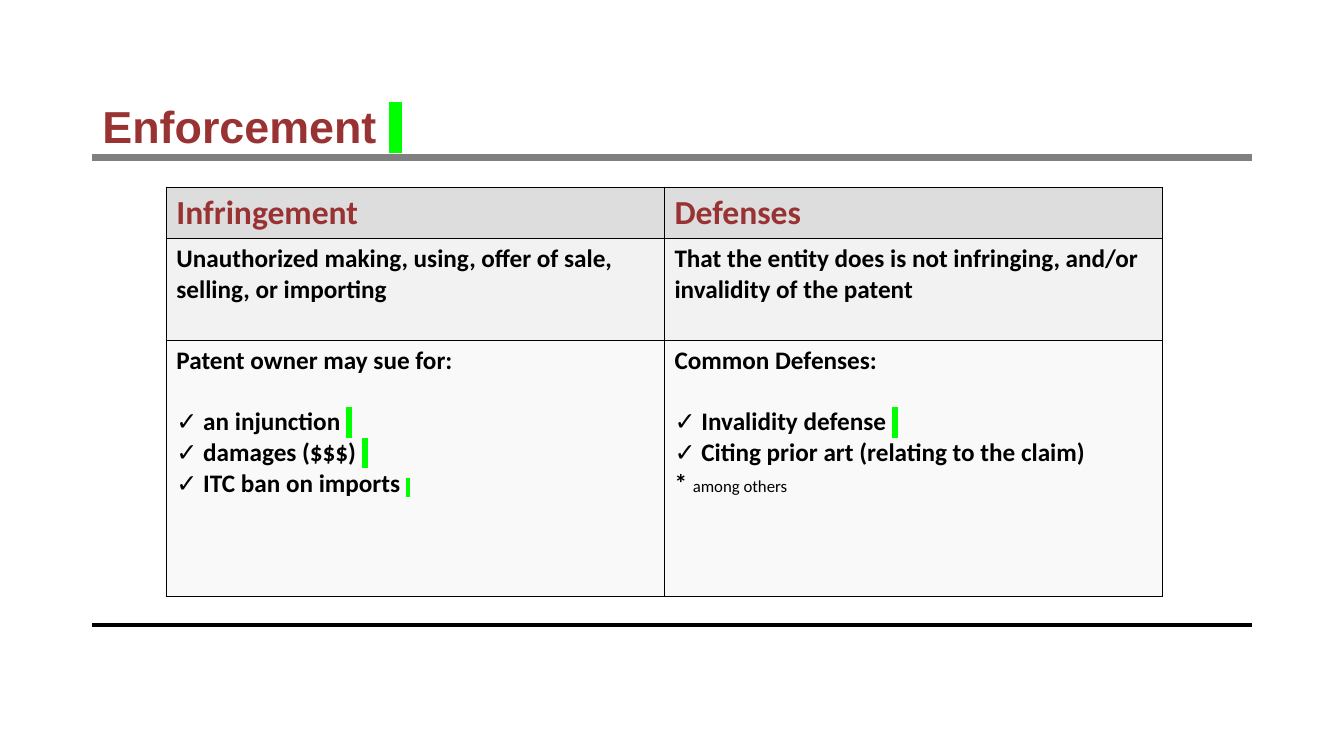
from pptx import Presentation
from pptx.dml.color import RGBColor
from pptx.enum.shapes import MSO_CONNECTOR as Connector
from pptx.enum.text import MSO_ANCHOR as Anchor, MSO_AUTO_SIZE as AutoSize, PP_ALIGN as Align
from pptx.oxml import parse_xml
from pptx.oxml.ns import nsdecls, qn
from pptx.util import Inches, Pt

BLACK = RGBColor(0, 0, 0)
GRAY = RGBColor(0x80, 0x80, 0x80)
MAROON = RGBColor(0x99, 0x33, 0x33)
GREEN = RGBColor(0, 0xFF, 0)
ROW_FILLS = [
    RGBColor(0xDD, 0xDD, 0xDD),
    RGBColor(0xF2, 0xF2, 0xF2),
    RGBColor(0xF9, 0xF9, 0xF9),
]

MARK = (" ", {"highlight": GREEN})
SMALL_MARK = (" ", {"highlight": GREEN, "size": 11})

TABLE_ROWS = [
    [[["Infringement"]], [["Defenses"]]],
    [
        [["Unauthorized making, using, offer of sale, selling, or importing"]],
        [["That the entity does is not infringing, and/or"], ["invalidity of the patent"]],
    ],
    [
        [
            ["Patent owner may sue for:"],
            ["✓ an injunction ", MARK],
            ["✓ damages ($$$) ", MARK],
            ["✓ ITC ban on imports ", SMALL_MARK],
        ],
        [
            ["Common Defenses:"],
            ["✓ Invalidity defense ", MARK],
            ["✓ Citing prior art (relating to the claim)"],
            ["* ", ("among others", {"size": 12, "bold": False})],
        ],
    ],
]


class SlideBuilder:
    columns, rows = 160, 90
    title_font, body_font = "Arial", "Calibri"
    lead_gap = Pt(22)

    def __init__(self, presentation):
        self.width = presentation.slide_width
        self.height = presentation.slide_height
        self.slide = presentation.slides.add_slide(presentation.slide_layouts[5])

    def x(self, column):
        return round(self.width * column / self.columns)

    def y(self, row):
        return round(self.height * row / self.rows)

    def add_run(self, paragraph, text, font, size, color, bold=True, highlight=None):
        run = paragraph.add_run()
        run.text = text
        run.font.name = font
        run.font.size = Pt(size)
        run.font.bold = bold
        run.font.color.rgb = color
        if highlight is not None:
            fill = run.font._element.find(qn("a:solidFill"))
            fill.addnext(parse_xml(
                f'<a:highlight {nsdecls("a")}><a:srgbClr val="{highlight}"/></a:highlight>'
            ))

    def add_runs(self, paragraph, pieces, **style):
        for piece in pieces:
            text, changes = (piece, {}) if isinstance(piece, str) else piece
            self.add_run(paragraph, text, **{**style, **changes})

    def title(self, pieces, left, top, width, height):
        shape = self.slide.shapes.title
        shape.left, shape.top = self.x(left), self.y(top)
        shape.width, shape.height = self.x(width), self.y(height)
        frame = shape.text_frame
        frame.word_wrap = True
        frame.auto_size = AutoSize.NONE
        frame.vertical_anchor = Anchor.MIDDLE
        paragraph = frame.paragraphs[0]
        paragraph.alignment = Align.LEFT
        paragraph.line_spacing = 0.9
        self.add_runs(paragraph, pieces, font=self.title_font, size=32, color=MAROON)

    def rule(self, left, right, row, color, weight):
        line = self.slide.shapes.add_connector(
            Connector.STRAIGHT, self.x(left), self.y(row), self.x(right), self.y(row)
        )
        line.line.color.rgb = color
        line.line.width = Pt(weight)
        line._element.spPr.append(parse_xml(f'<a:effectLst {nsdecls("a")}/>'))

    def border(self, cell):
        properties = cell._tc.get_or_add_tcPr()
        for position, side in enumerate(("lnL", "lnR", "lnT", "lnB")):
            properties.insert(position, parse_xml(
                f'<a:{side} {nsdecls("a")} w="{Pt(1)}"><a:solidFill>'
                f'<a:srgbClr val="{BLACK}"/></a:solidFill></a:{side}>'
            ))

    def fill_cell(self, cell, paragraphs, fill, size, color):
        cell.fill.solid()
        cell.fill.fore_color.rgb = fill
        self.border(cell)
        frame = cell.text_frame
        for index, pieces in enumerate(paragraphs):
            paragraph = frame.add_paragraph() if index else frame.paragraphs[0]
            if index == 1 and len(paragraphs) > 2:
                paragraph.space_before = self.lead_gap
            self.add_runs(paragraph, pieces, font=self.body_font, size=size, color=color)

    def table(self, contents, left, top, column_width, row_heights):
        count = len(contents[0])
        table = self.slide.shapes.add_table(
            len(contents), count, self.x(left), self.y(top),
            self.x(column_width * count), self.y(sum(row_heights)),
        ).table
        table.first_row = table.horz_banding = False
        for column in table.columns:
            column.width = self.x(column_width)
        for index, cells in enumerate(contents):
            table.rows[index].height = self.y(row_heights[index])
            size, color = (18, BLACK) if index else (24, MAROON)
            for position, paragraphs in enumerate(cells):
                self.fill_cell(
                    table.cell(index, position), paragraphs, ROW_FILLS[index], size, color
                )


def main():
    presentation = Presentation()
    presentation.slide_width = Inches(13.33)
    presentation.slide_height = Inches(7.5)
    builder = SlideBuilder(presentation)
    builder.rule(11, 149, 74.4, BLACK, 3.25)
    builder.rule(11, 149, 18.75, GRAY, 4.75)
    builder.title(["Enforcement ", MARK], 11, 6.6, 138, 17.4)
    builder.table(TABLE_ROWS, 19.8, 22.3, 59.3, [6.1, 12.1, 30.5])
    presentation.save("out.pptx")


if __name__ == "__main__":
    main()
